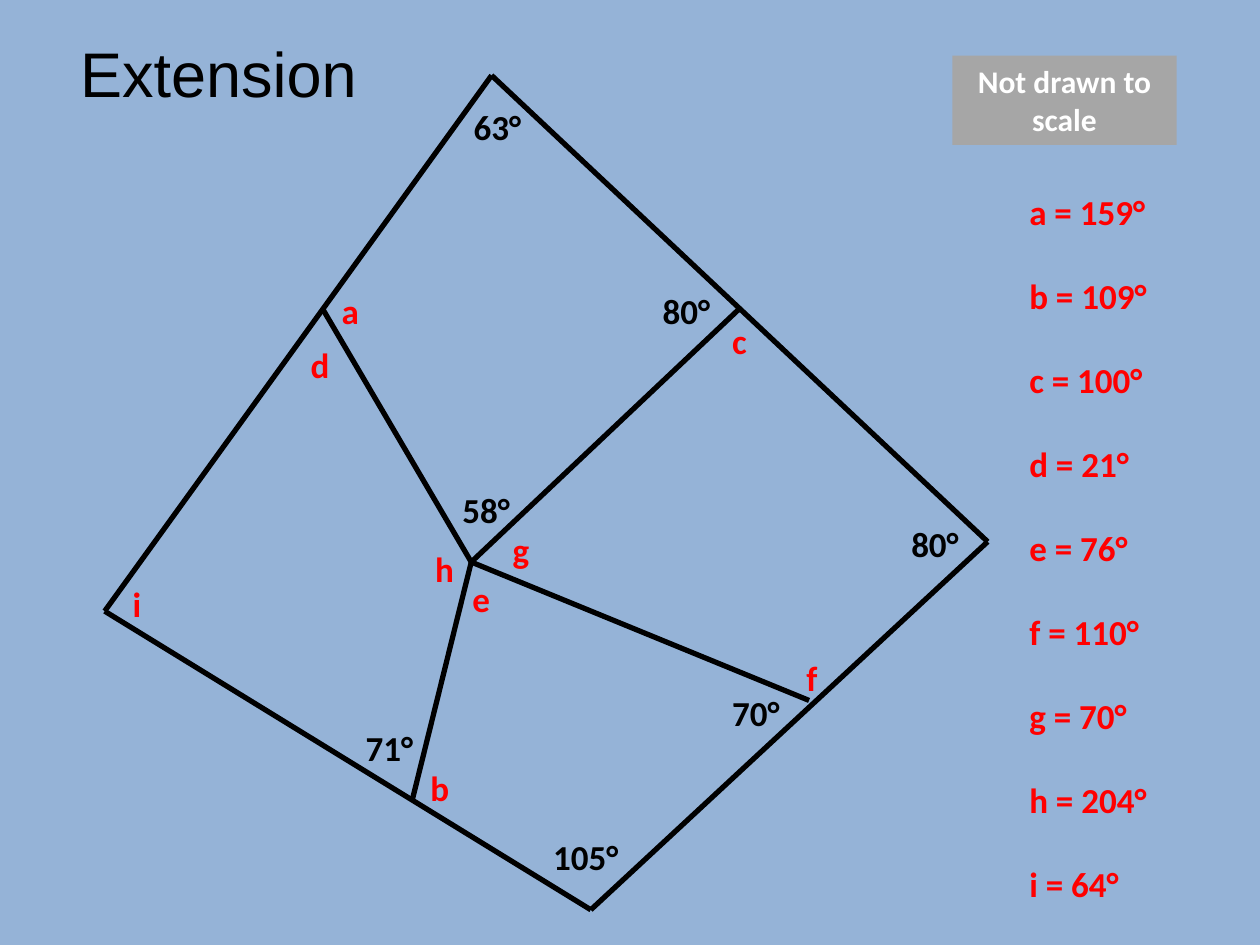
from lxml import etree
from pptx import Presentation
from pptx.dml.color import RGBColor
from pptx.enum.shapes import MSO_CONNECTOR, MSO_SHAPE
from pptx.enum.text import MSO_ANCHOR, MSO_AUTO_SIZE, PP_ALIGN
from pptx.oxml.ns import qn
from pptx.util import Cm, Pt

STRAIGHT = MSO_CONNECTOR.STRAIGHT
RECT = MSO_SHAPE.RECTANGLE
CENTER = PP_ALIGN.CENTER
BOTTOM, MIDDLE = MSO_ANCHOR.BOTTOM, MSO_ANCHOR.MIDDLE
NO_FIT = MSO_AUTO_SIZE.NONE
BLACK, RED, WHITE = "000000", "FF0000", "FFFFFF"


def paint(color_format, color):
    color_format.rgb = RGBColor.from_string(color)


def add_run(p, text, size, color, font="Calibri", bold=True):
    r = p.add_run()
    r.text = text
    r.font.name = font
    r.font.size = Pt(size)
    r.font.bold = bold
    paint(r.font.color, color)


prs = Presentation()
prs.slide_width, prs.slide_height = Cm(25.4), Cm(19.05)
s = prs.slides.add_slide(prs.slide_layouts[5])
s.background.fill.solid()
paint(s.background.fill.fore_color, "95B3D7")

left, top, right, bottom = (2.11, 12.32), (9.91, 1.52), (19.91, 10.92), (11.91, 18.34)
center = (9.5, 11.33)
on_sides = [(6.5, 6.22), (8.31, 16.13), (16.31, 14.12), (14.91, 6.22)]
edges = [(left, bottom), (left, top), (top, right), (right, bottom)]
edges += [(center, point) for point in on_sides]
for (x1, y1), (x2, y2) in edges:
    line = s.shapes.add_connector(STRAIGHT, Cm(x1), Cm(y1), Cm(x2), Cm(y2))
    line.line.width = Pt(3)
    paint(line.line.color, BLACK)
    etree.SubElement(line._element.spPr, qn("a:effectLst"))

label_widths = {1: 0.85, 3: 1.47, 4: 1.83}
labels = [
    ("80°", 18.85, 10.41), ("80°", 13.84, 5.71), ("70°", 15.24, 13.82),
    ("c", 14.91, 6.32), ("f", 16.37, 13.11), ("g", 10.5, 10.52),
    ("105°", 11.81, 16.71), ("63°", 10.03, 2.01), ("i", 2.76, 11.61),
    ("71°", 7.85, 14.53), ("b", 8.85, 15.32), ("e", 9.7, 11.51),
    ("58°", 9.8, 9.73), ("h", 8.95, 10.92), ("d", 6.44, 6.81),
    ("a", 7.06, 5.71),
]
for text, mid_x, y in labels:
    width = label_widths[len(text)]
    sp = s.shapes.add_textbox(Cm(mid_x - width / 2), Cm(y), Cm(width), Cm(1.12))
    tf = sp.text_frame
    tf.word_wrap = False
    p = tf.paragraphs[0]
    p.alignment = CENTER
    add_run(p, text, 20, RED if text.isalpha() else BLACK)

note = s.shapes.add_shape(RECT, Cm(19.2), Cm(1.12), Cm(4.52), Cm(1.8))
note.shadow.inherit = False
note.fill.solid()
paint(note.fill.fore_color, "A6A6A6")
note.line.fill.background()
note.text_frame.word_wrap = True
note.text_frame.vertical_anchor = MIDDLE
p = note.text_frame.paragraphs[0]
p.alignment = CENTER
add_run(p, "Not drawn to scale", 18, WHITE)

title = s.shapes.title
title.left, title.top, title.width, title.height = Cm(0.76), Cm(0.74), Cm(7.29), Cm(1.6)
tf = title.text_frame
tf.auto_size = NO_FIT
tf.vertical_anchor = BOTTOM
p = tf.paragraphs[0]
p.alignment = CENTER
add_run(p, "Extension", 36, BLACK, "Arial", False)

answers = {"a": 159, "b": 109, "c": 100, "d": 21, "e": 76,
           "f": 110, "g": 70, "h": 204, "i": 64}
sp = s.shapes.add_textbox(Cm(20.5), Cm(2.87), Cm(4.39), Cm(15.65))
tf = sp.text_frame
tf.word_wrap = True
for i, (letter, angle) in enumerate(answers.items()):
    p = tf.add_paragraph() if i else tf.paragraphs[0]
    p.line_spacing = 2.0
    add_run(p, f"{letter} = {angle}°", 20, RED)

prs.save("out.pptx")
